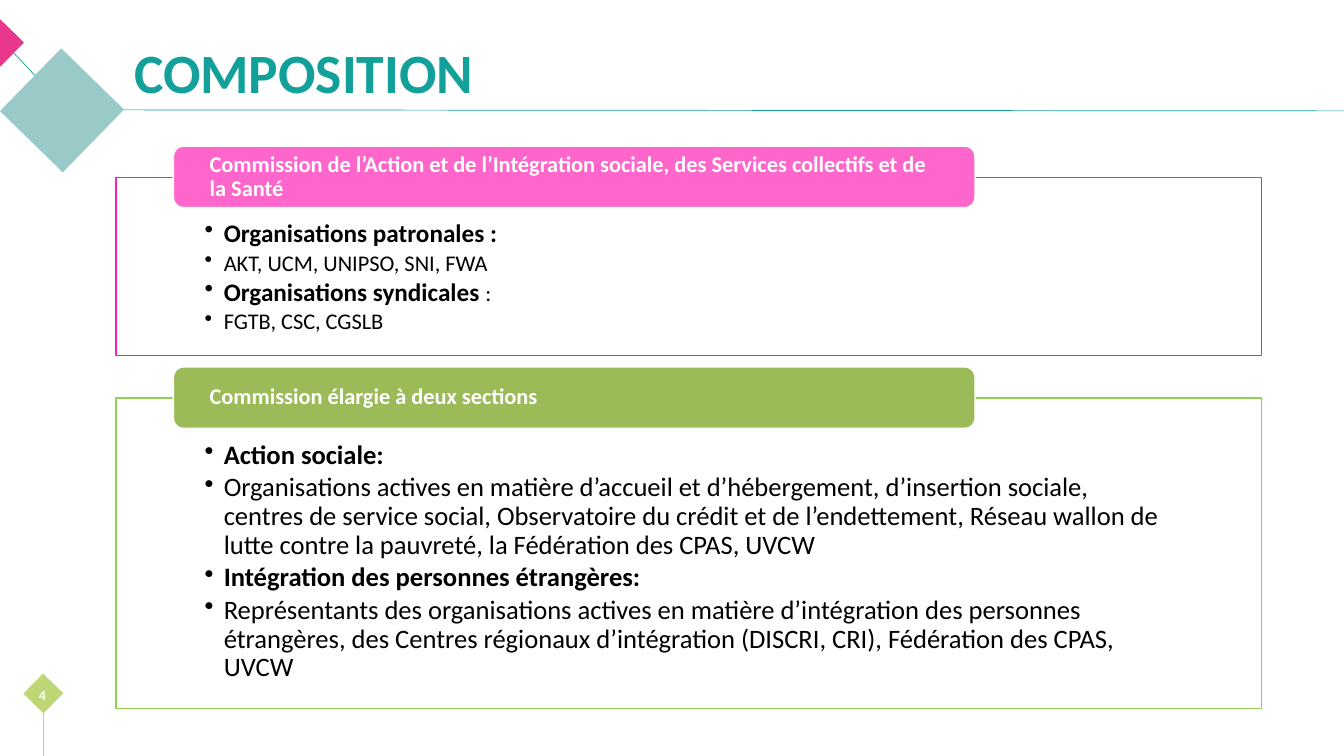
from lxml import etree
from pptx import Presentation
from pptx.dml.color import RGBColor
from pptx.enum.shapes import MSO_CONNECTOR, MSO_SHAPE
from pptx.enum.text import MSO_ANCHOR, MSO_AUTO_SIZE, PP_ALIGN
from pptx.oxml.ns import qn
from pptx.util import Inches, Pt

FONT = "Calibri"
TEAL = RGBColor(0x12, 0xA1, 0x9A)
PALE_TEAL = RGBColor(0x9A, 0xCA, 0xC7)
MAGENTA = RGBColor(0xE8, 0x37, 0x8D)
LIME = RGBColor(0xBF, 0xD6, 0x77)
PINK_LINE = RGBColor(0xF9, 0x1F, 0xB0)
PINK = RGBColor(0xFF, 0x66, 0xCC)
GREEN_LINE = RGBColor(0x92, 0xD0, 0x50)
GREEN = RGBColor(0x9B, 0xBB, 0x59)
WHITE = RGBColor(0xFF, 0xFF, 0xFF)
BLACK = RGBColor(0, 0, 0)

# Each section: top, height, frame colour, bar colour, heading,
# then paragraphs made of (text, size, bold) runs
SECTIONS = [
    (1.76, 1.77, PINK_LINE, PINK,
     "Commission de l’Action et de l’Intégration sociale, des Services collectifs et de la Santé",
     [[("Organisations patronales :", 18, True)],
      [("AKT, UCM, UNIPSO, SNI, FWA", 16, False)],
      [("Organisations syndicales ", 18, True), (":", 16, False)],
      [("FGTB, CSC, CGSLB", 16, False)]]),
    (3.95, 3.08, GREEN_LINE, GREEN,
     "Commission élargie à deux sections",
     [[("Action sociale:", 19, True)],
      [("Organisations actives en matière d’accueil et d’hébergement, d’insertion sociale, "
        "centres de service social, Observatoire du crédit et de l’endettement, Réseau wallon "
        "de lutte contre la pauvreté, la Fédération des CPAS, UVCW", 19, False)],
      [("Intégration des personnes étrangères:", 19, True)],
      [("Représentants des organisations actives en matière d’intégration des personnes "
        "étrangères, des Centres régionaux d’intégration (DISCRI, CRI), Fédération des CPAS, "
        "UVCW", 19, False)]]),
]


def set_font(font, size, color, bold):
    font.name, font.size, font.bold = FONT, Pt(size), bold
    font.color.rgb = color


def set_frame(frame, anchor, left=0.1, top=0.05, right=0.1, bottom=0.05):
    frame.word_wrap = True
    frame.auto_size = MSO_AUTO_SIZE.NONE
    frame.vertical_anchor = anchor
    frame.margin_left, frame.margin_top = Inches(left), Inches(top)
    frame.margin_right, frame.margin_bottom = Inches(right), Inches(bottom)


def add_box(slide, kind, left, top, width, height, fill=None, line=None):
    shape = slide.shapes.add_shape(
        kind, Inches(left), Inches(top), Inches(width), Inches(height))
    shape.shadow.inherit = False
    if fill is None:
        shape.fill.background()
    else:
        shape.fill.solid()
        shape.fill.fore_color.rgb = fill
    if line is None:
        shape.line.fill.background()
    else:
        shape.line.color.rgb = line
        shape.line.width = Pt(1)
    return shape


def add_diamond(slide, left, top, side, color):
    add_box(slide, MSO_SHAPE.RECTANGLE, left, top, side, side, color).rotation = 44.3


def add_line(slide, start, end, color, width):
    connector = slide.shapes.add_connector(
        MSO_CONNECTOR.STRAIGHT, *map(Inches, start + end))
    connector.line.color.rgb = color
    connector.line.width = Pt(width)
    etree.SubElement(connector.element.spPr, qn("a:effectLst"))


def add_bullet(paragraph):
    properties = paragraph._p.get_or_add_pPr()
    properties.set("marL", str(Inches(0.19)))
    properties.set("indent", str(-Inches(0.19)))
    etree.SubElement(properties, qn("a:buChar")).set("char", "•")


def add_section(slide, top, height, frame_color, bar_color, heading, items):
    # Outlined frame with its bulleted text
    box = add_box(slide, MSO_SHAPE.RECTANGLE, 1.15, top, 11.36, height, line=frame_color)
    frame = box.text_frame
    set_frame(frame, MSO_ANCHOR.TOP, 0.88, 0.43, 0.88, 0.14)
    for index, runs in enumerate(items):
        paragraph = frame.paragraphs[0] if index == 0 else frame.add_paragraph()
        add_bullet(paragraph)
        paragraph.alignment = PP_ALIGN.LEFT
        paragraph.line_spacing = 0.9
        paragraph.space_after = Pt(2.7)
        for text, size, bold in runs:
            run = paragraph.add_run()
            run.text = text
            set_font(run.font, size, BLACK, bold)

    # Heading bar straddling the top edge of the frame
    bar = add_box(slide, MSO_SHAPE.ROUNDED_RECTANGLE, 1.72, top - 0.31, 7.95, 0.61,
                  bar_color, WHITE)
    set_frame(bar.text_frame, MSO_ANCHOR.MIDDLE, 0.33, 0, 0.33, 0)
    paragraph = bar.text_frame.paragraphs[0]
    paragraph.text = heading
    paragraph.alignment = PP_ALIGN.LEFT
    paragraph.line_spacing = 0.9
    set_font(paragraph.font, 16, WHITE, True)


def add_title(slide, text):
    title = slide.shapes.title
    title.left, title.top = Inches(1.23), Inches(0.4)
    title.width, title.height = Inches(11.18), Inches(0.69)
    set_frame(title.text_frame, MSO_ANCHOR.MIDDLE)
    paragraph = title.text_frame.paragraphs[0]
    paragraph.text = text
    paragraph.alignment = PP_ALIGN.LEFT
    paragraph.line_spacing = 0.9
    set_font(paragraph.font, 39.6, TEAL, True)


def add_page_number(slide, number):
    box = slide.shapes.add_textbox(Inches(0.14), Inches(6.69), Inches(0.56), Inches(0.4))
    set_frame(box.text_frame, MSO_ANCHOR.MIDDLE)
    paragraph = box.text_frame.paragraphs[0]
    paragraph.text = number
    paragraph.alignment = PP_ALIGN.CENTER
    set_font(paragraph.font, 10, WHITE, True)


def main():
    presentation = Presentation()
    presentation.slide_width = Inches(13.33)
    presentation.slide_height = Inches(7.5)
    slide = presentation.slides.add_slide(presentation.slide_layouts[5])

    # Header and footer ornaments
    add_line(slide, (0.81, 1.24), (0, 0.38), TEAL, 0.5)
    add_line(slide, (0.89, 1.09), (13.33, 1.1), TEAL, 0.5)
    add_diamond(slide, 0.18, 0.66, 0.87, PALE_TEAL)
    add_diamond(slide, -0.16, 0.26, 0.33, MAGENTA)
    add_diamond(slide, 0.29, 6.74, 0.28, LIME)
    add_line(slide, (0.43, 7.5), (0.43, 7.06), LIME, 0.75)

    # Content
    add_title(slide, "COMPOSITION")
    add_page_number(slide, "4")
    for section in SECTIONS:
        add_section(slide, *section)

    presentation.save("out.pptx")


if __name__ == "__main__":
    main()
